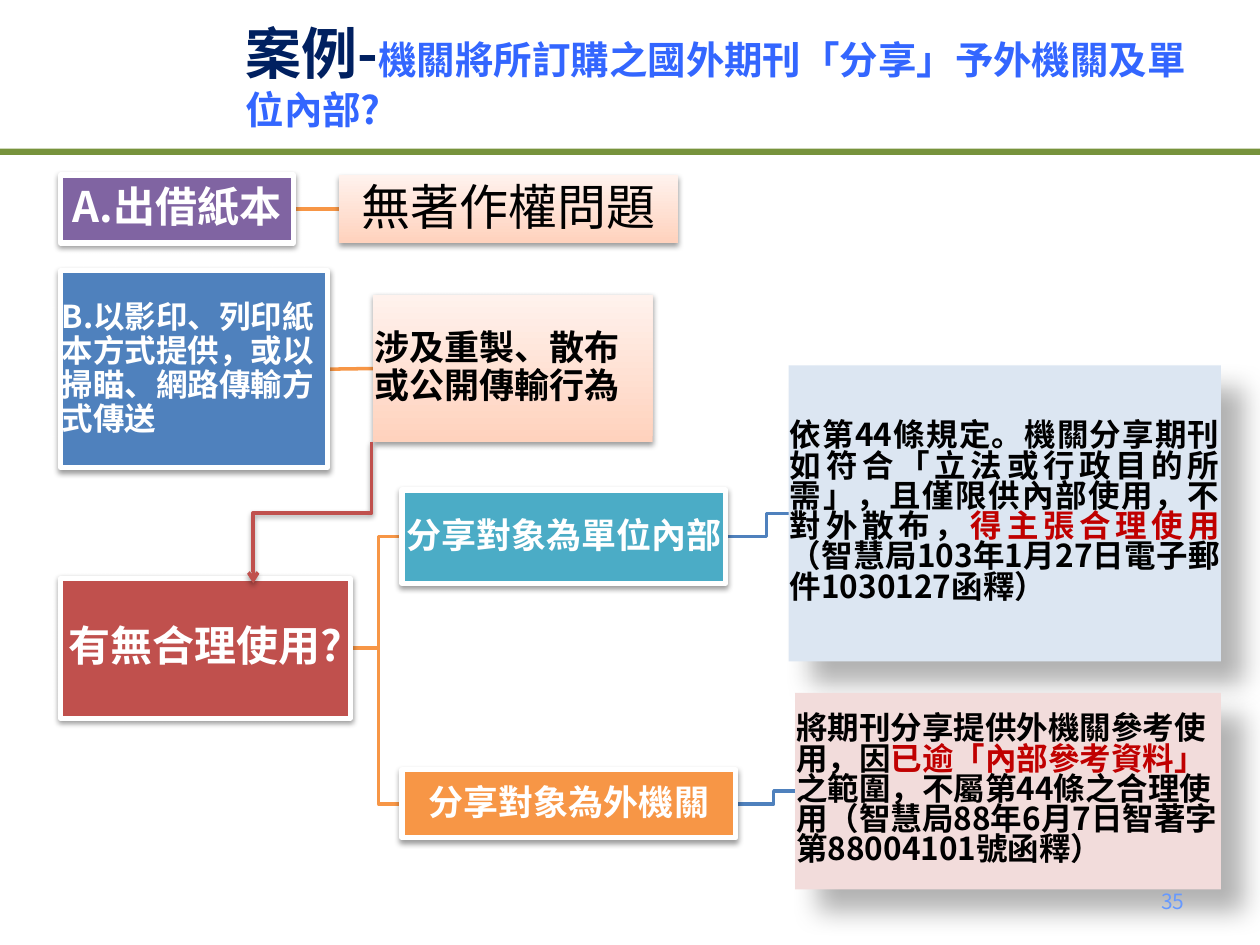
from lxml.etree import SubElement
from pptx import Presentation
from pptx.dml.color import RGBColor
from pptx.enum.shapes import MSO_CONNECTOR, MSO_SHAPE
from pptx.enum.text import MSO_ANCHOR, PP_ALIGN
from pptx.oxml.ns import qn
from pptx.util import Inches, Pt

RECTANGLE = MSO_SHAPE.RECTANGLE
STRAIGHT, ELBOW = MSO_CONNECTOR.STRAIGHT, MSO_CONNECTOR.ELBOW
LEFT, CENTER, RIGHT, JUSTIFY = PP_ALIGN.LEFT, PP_ALIGN.CENTER, PP_ALIGN.RIGHT, PP_ALIGN.JUSTIFY
MIDDLE = MSO_ANCHOR.MIDDLE
LEFT_SIDE, RIGHT_SIDE = 1, 3
FONT = "Noto Sans CJK SC"
COLORS = {
    "olive": "77933C", "navy": "002060", "title blue": "3366FF", "number": "6699FF",
    "purple": "8064A2", "blue": "4F81BD", "red": "C0504D", "teal": "4BACC6",
    "orange": "F79646", "pale blue": "DCE6F2", "pale red": "F2DCDB",
    "peach": "FFD2BD", "light peach": "FFF2ED", "emphasis": "C00000",
    "white": "FFFFFF", "black": "000000",
}
RGB = {name: RGBColor.from_string(value) for name, value in COLORS.items()}
# Opacity in percent, blur and distance in points, direction in degrees
SOFT = (38, 3.15, 1.57, 90)
DEEP = (30, 15, 18, 45)


def write_runs(paragraph, runs, bold=True):
    """Add (text, size, colour) runs in the slide's font, Latin and East Asian."""
    for text, size, color in runs:
        run = paragraph.add_run()
        run.text = text
        run.font.name = FONT
        run.font.size = Pt(size)
        run.font.bold = bold
        run.font.color.rgb = RGB[color]
        SubElement(run.font._element, qn("a:ea"), typeface=FONT)


def set_shadow(item, shadow=None):
    """Replace the theme's effects by one outer shadow, or by none."""
    effects = SubElement(item._element.spPr, qn("a:effectLst"))
    if shadow:
        opacity, blur, distance, direction = shadow
        outer = SubElement(effects, qn("a:outerShdw"), blurRad=str(Pt(blur)),
                           dist=str(Pt(distance)), dir=str(direction * 60000),
                           rotWithShape="0")
        black = SubElement(outer, qn("a:srgbClr"), val=COLORS["black"])
        SubElement(black, qn("a:alpha"), val=str(opacity * 1000))


prs = Presentation()
prs.slide_width, prs.slide_height = Inches(10), Inches(7.5)
slide = prs.slides.add_slide(prs.slide_layouts[5])
shapes = slide.shapes

title = shapes.title
title.left, title.top = Inches(1.85), Inches(0.13)
title.width, title.height = Inches(7.87), Inches(0.94)
title.text_frame.vertical_anchor = MIDDLE
heading = title.text_frame.paragraphs[0]
heading.alignment = LEFT
write_runs(heading, [("案例-", 32, "navy"),
                     ("機關將所訂購之國外期刊「分享」予外機關及單位內部?", 22, "title blue")])

rule = shapes.add_shape(RECTANGLE, 0, Inches(1.18), prs.slide_width, Inches(0.05))
rule.fill.solid()
rule.fill.fore_color.rgb = RGB["olive"]
rule.line.fill.background()
rule.shadow.inherit = False

# Name: (left, top, width, height), fill, alignment, runs
steps = {
    "paper loan": ((0.48, 1.39, 1.85, 0.54), "purple", CENTER, [("A.出借紙本", 24, "white")]),
    "no issue": ((2.69, 1.39, 2.69, 0.54), "peach", CENTER, [("無著作權問題", 28, "black")]),
    "copies": ((0.48, 2.15, 2.12, 1.56), "blue", LEFT,
               [("B.以影印、列印紙本方式提供，或以掃瞄、網路傳輸方式傳送", 18, "white")]),
    "acts": ((2.96, 2.34, 2.22, 1.17), "peach", LEFT,
             [("涉及重製、散布或公開傳輸行為", 20, "black")]),
    "fair use": ((0.48, 4.59, 2.3, 1.11), "red", CENTER, [("有無合理使用?", 24, "white")]),
    "internal": ((3.19, 3.89, 2.57, 0.74), "teal", CENTER,
                 [("分享對象為單位內部", 20, "white")]),
    "internal ruling": ((6.26, 2.9, 3.43, 2.35), "pale blue", JUSTIFY, [
        ("依第44條規定。機關分享期刊如符合「立法或行政目的所需」，且僅限供內部使用，不對外散布，",
         18, "black"),
        ("得主張合理使用", 18, "emphasis"),
        ("（智慧局103年1月27日電子郵件1030127函釋）", 18, "black")]),
    "external": ((3.19, 6.11, 2.65, 0.54), "orange", CENTER,
                 [("分享對象為外機關", 20, "white")]),
    "external ruling": ((6.31, 5.5, 3.38, 1.56), "pale red", LEFT, [
        ("將期刊分享提供外機關參考使用，因", 18, "black"),
        ("已逾「內部參考資料」", 18, "emphasis"),
        ("之範圍，不屬第44條之合理使用（智慧局88年6月7日智著字第88004101號函釋）",
         18, "black")]),
}
boxes = {}
for name, (place, fill, alignment, runs) in steps.items():
    box = boxes[name] = shapes.add_shape(RECTANGLE, *map(Inches, place))
    is_ruling = fill.startswith("pale")
    if fill == "peach":
        box.fill.gradient()
        box.fill.gradient_angle = 90
        for stop, color in zip(box.fill.gradient_stops, ("peach", "light peach")):
            stop.color.rgb = RGB[color]
    else:
        box.fill.solid()
        box.fill.fore_color.rgb = RGB[fill]
    if is_ruling or fill == "peach":
        box.line.fill.background()
    else:
        box.line.color.rgb = RGB["white"]
        box.line.width = Pt(3)
    set_shadow(box, DEEP if is_ruling else SOFT)

    frame = box.text_frame
    frame.word_wrap = True
    frame.vertical_anchor = MIDDLE
    frame.margin_left = frame.margin_right = Inches(0.01)
    frame.margin_top = frame.margin_bottom = Inches(0.01)
    paragraph = frame.paragraphs[0]
    paragraph.alignment = alignment
    paragraph.line_spacing = 0.8 if is_ruling else 0.9
    write_runs(paragraph, runs, bold=name != "no issue")

# From, to, colour, position of the bend along the way in percent
links = [
    ("paper loan", "no issue", "orange", None),
    ("copies", "acts", "orange", None),
    ("fair use", "internal", "orange", 55),
    ("fair use", "external", "orange", 55),
    ("internal", "internal ruling", "blue", 65),
    ("external", "external ruling", "blue", 64),
]
for start, end, color, bend in links:
    link = shapes.add_connector(ELBOW if bend else STRAIGHT, 0, 0, 0, 0)
    link.begin_connect(boxes[start], RIGHT_SIDE)
    link.end_connect(boxes[end], LEFT_SIDE)
    link.line.color.rgb = RGB[color]
    link.line.width = Pt(2)
    set_shadow(link)
    if bend:
        adjustments = link._element.spPr.find(qn("a:prstGeom")).find(qn("a:avLst"))
        SubElement(adjustments, qn("a:gd"), name="adj1", fmla=f"val {bend * 1000}")
    boxes["paper loan"]._element.addprevious(link._element)

# The turned elbow leaves downwards from the corner of the acts box
question_arrow = shapes.add_connector(ELBOW, Inches(1.92), Inches(3.6), Inches(3.04), Inches(4.54))
question_arrow._element.spPr.xfrm.set("rot", str(90 * 60000))
question_arrow.line.color.rgb = RGB["red"]
question_arrow.line.width = Pt(2)
SubElement(question_arrow.line._get_or_add_ln(), qn("a:tailEnd"), type="arrow")
set_shadow(question_arrow, SOFT)

page_number = shapes.add_textbox(Inches(7.17), Inches(6.95), Inches(2.33), Inches(0.4))
page_number.text_frame.word_wrap = True
page_number.text_frame.vertical_anchor = MIDDLE
number_line = page_number.text_frame.paragraphs[0]
number_line.alignment = RIGHT
write_runs(number_line, [("35", 12, "number")], bold=False)

prs.save("out.pptx")
